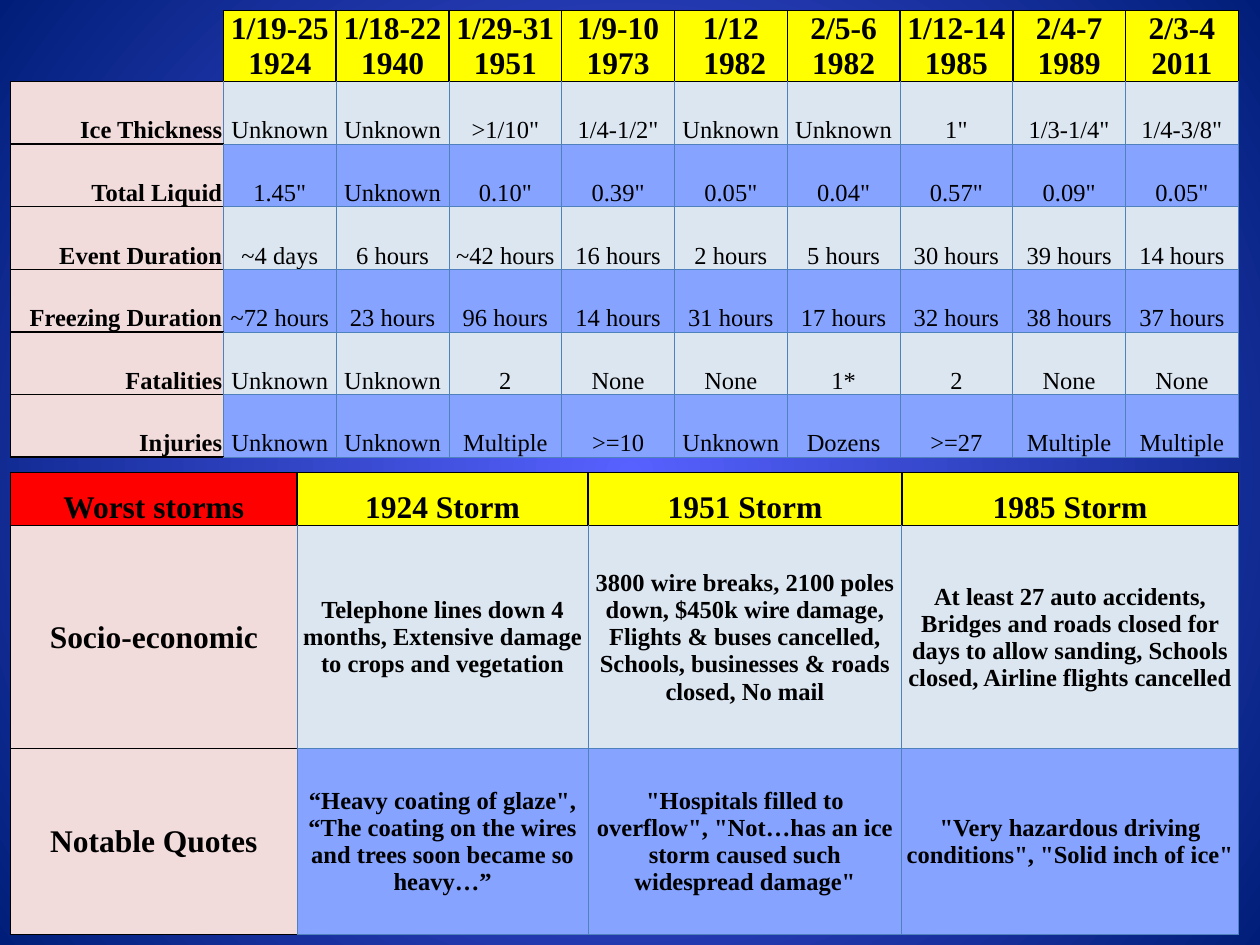
from dataclasses import dataclass

from lxml import etree
from pptx import Presentation
from pptx.dml.color import RGBColor
from pptx.enum.text import MSO_ANCHOR, PP_ALIGN
from pptx.oxml.ns import qn
from pptx.util import Pt

BOTTOM, MIDDLE = MSO_ANCHOR.BOTTOM, MSO_ANCHOR.MIDDLE
CENTER, RIGHT = PP_ALIGN.CENTER, PP_ALIGN.RIGHT

FONT = "Times New Roman"
COLORS = {
    "black": "000000",
    "rule": "4F81BD",
    "header": "FFFF00",
    "worst": "FF0000",
    "label": "F2DCDB",
    "light": "DCE6F1",
    "blue": "85A3FF",
    "glow": "5761FF",
    "navy": "001E79",
}
BANDS = ("light", "blue")
WIDTHS = {"black": 1, "rule": 0.5}


@dataclass(frozen=True)
class CellStyle:
    fill: str | None
    borders: tuple[str | None, ...]  # left, right, top, bottom
    size: float = 14
    bold: bool = True
    align: PP_ALIGN = CENTER
    anchor: MSO_ANCHOR = BOTTOM


@dataclass(frozen=True)
class Grid:
    top: float
    columns: list[float]
    rows: list[float]
    texts: list[list[str]]
    corner: CellStyle
    label: CellStyle
    body_bold: bool
    body_anchor: MSO_ANCHOR


LEFT = 6
BOXED = ("black",) * 4
LABEL_BORDERS = ("black", "rule", "black", "black")
HEADER = CellStyle("header", BOXED, size=18)

EVENTS = Grid(
    top=6,
    columns=[121.7] + [64.45] * 9,
    rows=[38.2] + [35.8] * 6,
    texts=[
        ["", "1/19-25 1924", "1/18-22 1940", "1/29-31 1951", "1/9-10 1973",
         "1/12\n 1982", "2/5-6 1982", "1/12-14 1985", "2/4-7 1989", "2/3-4 2011"],
        ["Ice Thickness", "Unknown", "Unknown", '>1/10"', '1/4-1/2"',
         "Unknown", "Unknown", '1"', '1/3-1/4"', '1/4-3/8"'],
        ["Total Liquid", '1.45"', "Unknown", '0.10"', '0.39"',
         '0.05"', '0.04"', '0.57"', '0.09"', '0.05"'],
        ["Event Duration", "~4 days", "6 hours", "~42 hours", "16 hours",
         "2 hours", "5 hours", "30 hours", "39 hours", "14 hours"],
        ["Freezing Duration", "~72 hours", "23 hours", "96 hours", "14 hours",
         "31 hours", "17 hours", "32 hours", "38 hours", "37 hours"],
        ["Fatalities", "Unknown", "Unknown", "2", "None",
         "None", "1*", "2", "None", "None"],
        ["Injuries", "Unknown", "Unknown", "Multiple", ">=10",
         "Unknown", "Dozens", ">=27", "Multiple", "Multiple"],
    ],
    corner=CellStyle(None, (None, "black", None, "black"), size=18),
    label=CellStyle("label", LABEL_BORDERS, align=RIGHT),
    body_bold=False,
    body_anchor=BOTTOM,
)

WORST_STORMS = Grid(
    top=270,
    columns=[163.8, 166.3, 179.3, 192.3],
    rows=[30.4, 127.2, 106.5],
    texts=[
        ["Worst storms", "1924 Storm", "1951 Storm", "1985 Storm"],
        ["Socio-economic",
         "Telephone lines down 4 months, Extensive damage to crops and vegetation",
         "3800 wire breaks, 2100 poles down, $450k wire damage, Flights & buses "
         "cancelled, Schools, businesses & roads closed, No mail",
         "At least 27 auto accidents, Bridges and roads closed for days to allow "
         "sanding, Schools closed, Airline flights cancelled"],
        ["Notable Quotes",
         "“Heavy coating of glaze\", “The coating on the wires and trees soon "
         "became so heavy…”",
         '"Hospitals filled to overflow", "Not…has an ice storm caused such '
         'widespread damage"',
         '"Very hazardous driving conditions", "Solid inch of ice"'],
    ],
    corner=CellStyle("worst", BOXED, size=18),
    label=CellStyle("label", LABEL_BORDERS, size=18, anchor=MIDDLE),
    body_bold=True,
    body_anchor=MIDDLE,
)


def rgb(name: str) -> RGBColor:
    return RGBColor.from_string(COLORS[name])


def paint_background(page) -> None:
    """Fill the page with a circular gradient glowing from the centre."""
    fill = page.background.fill
    fill.gradient()
    for stop, name in zip(fill.gradient_stops, ("glow", "navy")):
        stop.color.rgb = rgb(name)
    linear = next(page.background._cSld.iter(qn("a:lin")))
    circle = etree.Element(qn("a:path"), path="circle")
    etree.SubElement(circle, qn("a:fillToRect"), l="50000", t="50000", r="50000", b="50000")
    linear.getparent().replace(linear, circle)


def set_borders(cell, borders: tuple[str | None, ...]) -> None:
    properties = cell._tc.get_or_add_tcPr()
    for index, (side, name) in enumerate(zip("LRTB", borders)):
        line = etree.Element(qn(f"a:ln{side}"))
        if name is None:
            etree.SubElement(line, qn("a:noFill"))
        else:
            line.set("w", str(Pt(WIDTHS[name])))
            solid = etree.SubElement(line, qn("a:solidFill"))
            etree.SubElement(solid, qn("a:srgbClr"), val=COLORS[name])
        properties.insert(index, line)


def fill_cell(cell, text: str, style: CellStyle) -> None:
    cell.margin_left = cell.margin_right = cell.margin_top = Pt(0.7)
    cell.margin_bottom = Pt(0)
    cell.vertical_anchor = style.anchor
    if style.fill is None:
        cell.fill.background()
    else:
        cell.fill.solid()
        cell.fill.fore_color.rgb = rgb(style.fill)
    set_borders(cell, style.borders)
    cell.text_frame.text = text
    for para in cell.text_frame.paragraphs:
        para.alignment = style.align
        para.font.name = FONT
        para.font.size = Pt(style.size)
        para.font.bold = style.bold
        para.font.color.rgb = rgb("black")


def style_at(grid: Grid, row: int, column: int) -> CellStyle:
    if row == 0:
        return HEADER if column else grid.corner
    if column == 0:
        return grid.label
    top = "black" if row == 1 else "rule"
    return CellStyle(BANDS[(row - 1) % 2], ("rule", "rule", top, "rule"),
                     bold=grid.body_bold, anchor=grid.body_anchor)


def draw_grid(page, grid: Grid) -> None:
    table = page.shapes.add_table(
        len(grid.rows), len(grid.columns), Pt(LEFT), Pt(grid.top),
        Pt(sum(grid.columns)), Pt(sum(grid.rows))).table
    table.first_row = table.horz_banding = False
    for column, width in zip(table.columns, grid.columns):
        column.width = Pt(width)
    for row, height in zip(table.rows, grid.rows):
        row.height = Pt(height)
    for row, texts in enumerate(grid.texts):
        for column, text in enumerate(texts):
            fill_cell(table.cell(row, column), text, style_at(grid, row, column))


def main() -> None:
    deck = Presentation()
    deck.slide_width, deck.slide_height = Pt(720), Pt(540)
    page = deck.slides.add_slide(deck.slide_layouts[6])
    paint_background(page)
    for grid in (EVENTS, WORST_STORMS):
        draw_grid(page, grid)
    deck.save("out.pptx")


if __name__ == "__main__":
    main()
